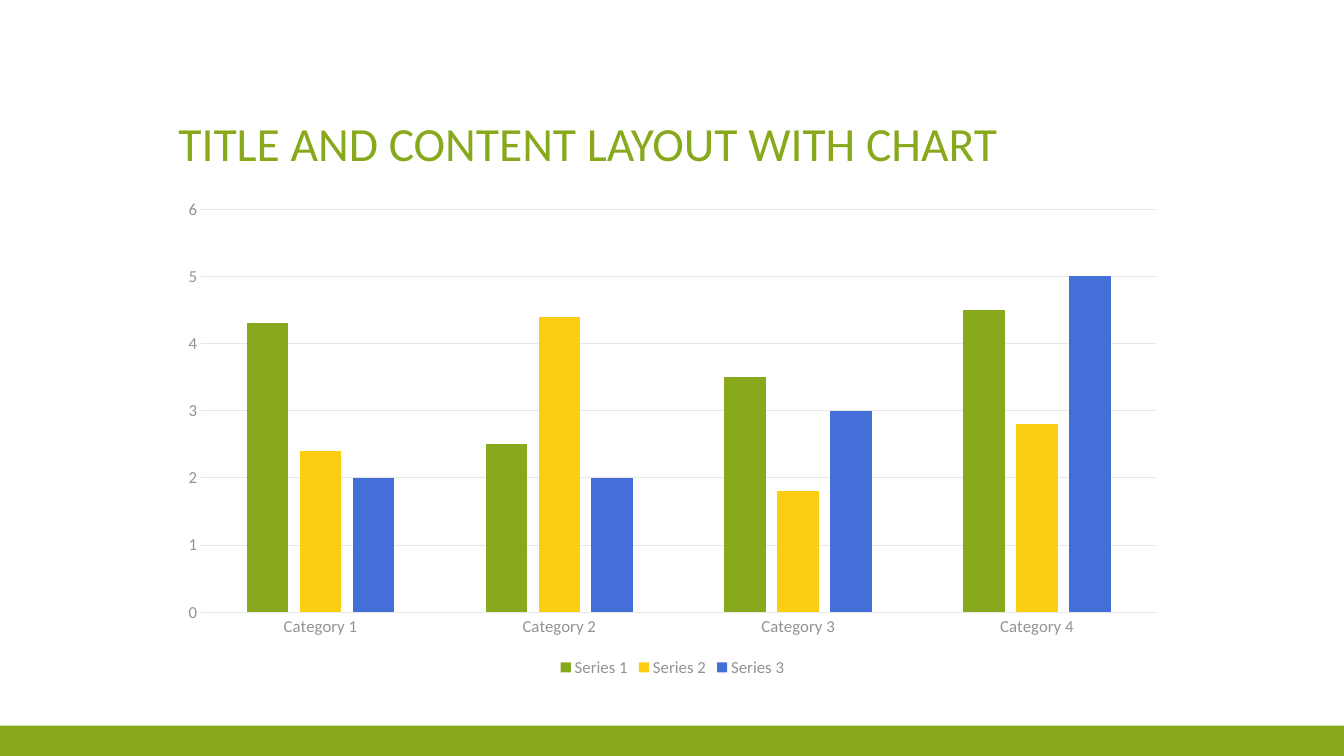
from dataclasses import dataclass

from pptx import Presentation
from pptx.chart.data import CategoryChartData
from pptx.dml.color import RGBColor
from pptx.enum.chart import XL_CHART_TYPE, XL_LEGEND_POSITION, XL_TICK_MARK
from pptx.enum.shapes import MSO_SHAPE
from pptx.enum.text import MSO_ANCHOR, MSO_AUTO_SIZE, PP_ALIGN
from pptx.util import Inches, Pt

COLUMN = XL_CHART_TYPE.COLUMN_CLUSTERED
BELOW = XL_LEGEND_POSITION.BOTTOM
NO_TICK = XL_TICK_MARK.NONE
RECT = MSO_SHAPE.RECTANGLE
BOTTOM = MSO_ANCHOR.BOTTOM
NO_FIT = MSO_AUTO_SIZE.NONE
LEFT = PP_ALIGN.LEFT


@dataclass(frozen=True)
class Theme:
    font: str = "Calibri"
    green: str = "87A91B"
    gold: str = "FBCE11"
    blue: str = "446ED8"
    text: str = "595959"
    label: str = "939393"
    grid: str = "E6E6E6"
    title_size: float = 34
    chart_size: float = 10
    label_size: float = 12
    line: float = 0.75


THEME = Theme()
CATS = [f"Category {n}" for n in range(1, 5)]
SERIES = [
    ("Series 1", (4.3, 2.5, 3.5, 4.5), THEME.green),
    ("Series 2", (2.4, 4.4, 1.8, 2.8), THEME.gold),
    ("Series 3", (2, 2, 3, 5), THEME.blue),
]


def box(left, top, width, height):
    return [Inches(side) for side in (left, top, width, height)]


def paint(fill, color):
    fill.solid()
    fill.fore_color.rgb = RGBColor.from_string(color)


def set_font(font, size=THEME.label_size, color=THEME.label):
    font.name = THEME.font
    font.size = Pt(size)
    font.bold = False
    font.color.rgb = RGBColor.from_string(color)


def set_line(line):
    line.width = Pt(THEME.line)
    line.color.rgb = RGBColor.from_string(THEME.grid)


def put_text(shape, text, size, color, anchor=BOTTOM, align=LEFT, space=0.9):
    frame = shape.text_frame
    frame.word_wrap = True
    frame.auto_size = NO_FIT
    frame.vertical_anchor = anchor
    para = frame.paragraphs[0]
    para.alignment = align
    para.line_spacing = space
    run = para.add_run()
    run.text = text
    set_font(run.font, size, color)


def add_title(slide, text, place):
    title = slide.shapes.title
    title.left, title.top, title.width, title.height = place
    put_text(title, text, size=THEME.title_size, color=THEME.green)


def add_band(slide, place):
    band = slide.shapes.add_shape(RECT, *place)
    band.shadow.inherit = False
    paint(band.fill, THEME.green)
    band.line.fill.background()


def style_axis(axis):
    axis.major_tick_mark = NO_TICK
    axis.minor_tick_mark = NO_TICK
    set_font(axis.tick_labels.font)


def add_bars(slide, place):
    data = CategoryChartData()
    data.categories = CATS
    for name, values, _ in SERIES:
        data.add_series(name, values)
    chart = slide.shapes.add_chart(COLUMN, *place, data).chart
    chart.has_title = False
    set_font(chart.font, THEME.chart_size, THEME.text)

    chart.has_legend = True
    chart.legend.position = BELOW
    chart.legend.include_in_layout = False
    set_font(chart.legend.font)

    style_axis(chart.category_axis)
    set_line(chart.category_axis.format.line)
    scale = chart.value_axis
    style_axis(scale)
    scale.format.line.fill.background()
    scale.has_major_gridlines = True
    set_line(scale.major_gridlines.format.line)

    plot = chart.plots[0]
    plot.vary_by_categories = False
    plot.gap_width = 219
    plot.overlap = -27
    for bars, (_, _, color) in zip(plot.series, SERIES):
        paint(bars.format.fill, color)


def main():
    deck = Presentation()
    deck.slide_width, deck.slide_height = Inches(13.33), Inches(7.5)
    slide = deck.slides.add_slide(deck.slide_layouts[5])
    paint(slide.background.fill, "FFFFFF")
    add_band(slide, box(0, 7.2, 13.33, 0.3))
    add_title(slide, "TITLE AND CONTENT LAYOUT WITH CHART", box(1.67, 0.5, 10, 1.25))
    add_bars(slide, box(1.67, 1.88, 10, 4.88))
    deck.save("out.pptx")


if __name__ == "__main__":
    main()
